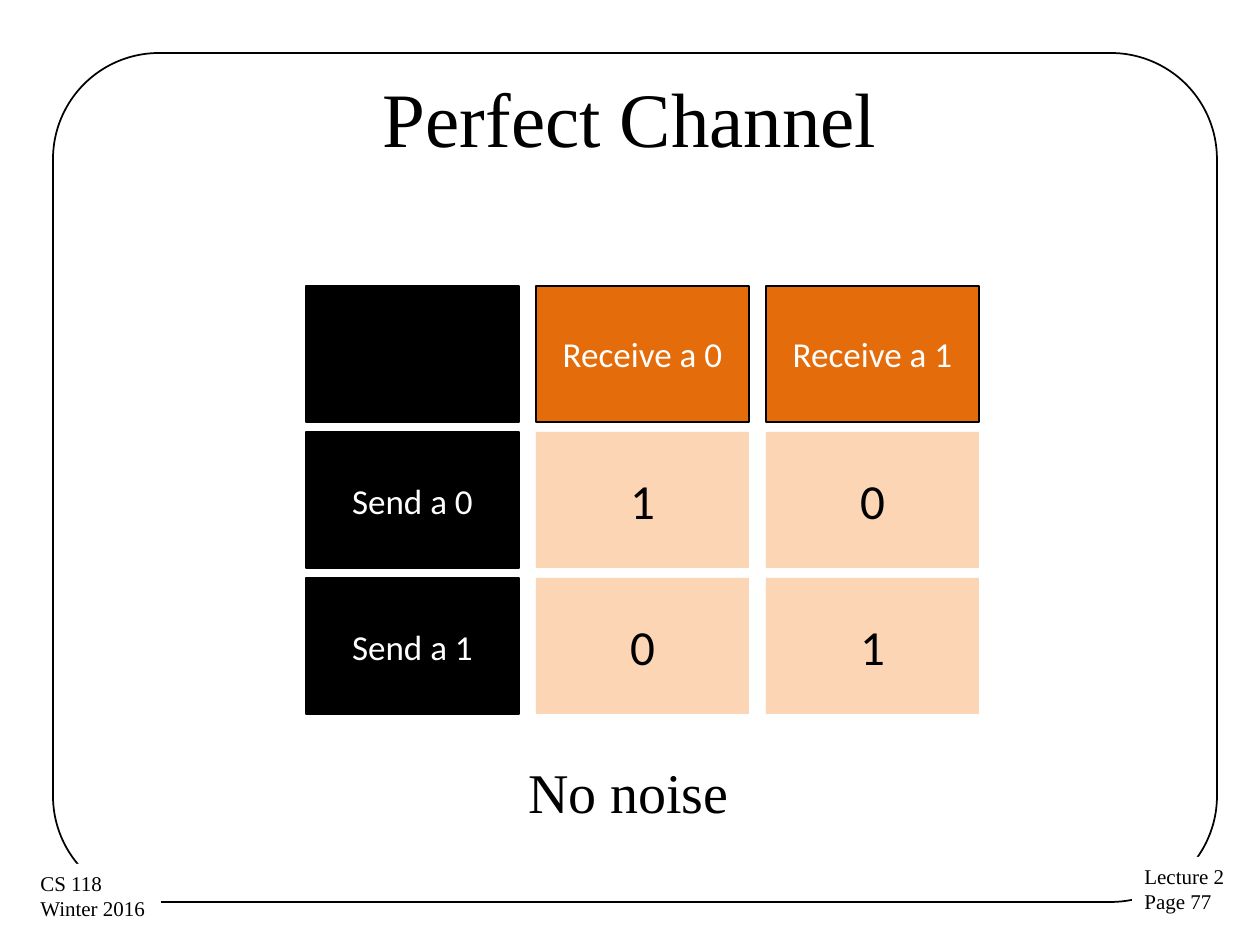
from pptx import Presentation
from pptx.dml.color import RGBColor
from pptx.enum.shapes import MSO_SHAPE
from pptx.enum.text import MSO_ANCHOR, MSO_AUTO_SIZE, PP_ALIGN
from pptx.util import Emu, Pt

BLACK = RGBColor(0x00, 0x00, 0x00)
WHITE = RGBColor(0xFF, 0xFF, 0xFF)
ORANGE = RGBColor(0xE4, 0x6C, 0x0A)
PEACH = RGBColor(0xFC, 0xD5, 0xB5)

SERIF = "Times New Roman"
SANS = "Calibri"
PX_PER_INCH = 126


def px(n):
    return Emu(round(n * 914400 / PX_PER_INCH))


class SlideBuilder:
    def __init__(self, prs):
        self.s = prs.slides.add_slide(prs.slide_layouts[6])

    def set_text(self, sp, text, size, font, color, align):
        tf = sp.text_frame
        tf.text = text
        for p in tf.paragraphs:
            p.alignment = align
            for r in p.runs:
                r.font.size = Pt(size)
                r.font.name = font
                r.font.color.rgb = color
        return tf

    def shape(self, kind, x, y, w, h, fill=None, line=None):
        sp = self.s.shapes.add_shape(kind, px(x), px(y), px(w), px(h))
        sp.shadow.inherit = False
        if fill is None:
            sp.fill.background()
        else:
            sp.fill.solid()
            sp.fill.fore_color.rgb = fill
        if line is None:
            sp.line.fill.background()
        else:
            sp.line.color.rgb = BLACK
            sp.line.width = Pt(line)
        return sp

    def frame(self, x, y, w, h):
        sp = self.shape(MSO_SHAPE.ROUNDED_RECTANGLE, x, y, w, h, line=1)
        sp.adjustments[0] = 0.125

    def cell(self, x, y, w, h, text, fill, color, size, line):
        sp = self.shape(MSO_SHAPE.RECTANGLE, x, y, w, h, fill, line)
        if text:
            tf = self.set_text(sp, text, size, SANS, color, PP_ALIGN.CENTER)
            tf.vertical_anchor = MSO_ANCHOR.MIDDLE

    def footer(self, x, y, w, h, text):
        sp = self.shape(MSO_SHAPE.RECTANGLE, x, y, w, h, WHITE)
        tf = self.set_text(sp, text, 12, SERIF, BLACK, PP_ALIGN.LEFT)
        tf.vertical_anchor = MSO_ANCHOR.TOP
        tf.word_wrap = False
        tf.auto_size = MSO_AUTO_SIZE.SHAPE_TO_FIT_TEXT

    def label(self, x, y, w, h, text, size, anchor=MSO_ANCHOR.TOP):
        sp = self.s.shapes.add_textbox(px(x), px(y), px(w), px(h))
        tf = self.set_text(sp, text, size, SERIF, BLACK, PP_ALIGN.CENTER)
        tf.word_wrap = True
        tf.vertical_anchor = anchor


def main():
    prs = Presentation()
    prs.slide_width, prs.slide_height = px(1260), px(945)
    b = SlideBuilder(prs)

    # Frame and footers
    b.frame(53, 53, 1164, 849)
    b.footer(1132, 857, 106, 64, "Lecture 2\nPage 77")
    b.footer(28, 864, 133, 64, "CS 118\nWinter 2016")

    # Title
    b.label(63, 38, 1134, 158, "Perfect Channel", 44, MSO_ANCHOR.MIDDLE)

    # Channel matrix: sent bit by row, received bit by column
    matrix = [
        ["", "Receive a 0", "Receive a 1"],
        ["Send a 0", "1", "0"],
        ["Send a 1", "0", "1"],
    ]
    left, top, col_pitch, row_pitch = 306, 286, 230, 146
    for i, row in enumerate(matrix):
        for j, text in enumerate(row):
            if j == 0:
                style = (BLACK, WHITE, 20, 0.75)
            elif i == 0:
                style = (ORANGE, WHITE, 20, 0.75)
            else:
                style = (PEACH, BLACK, 28, None)
            b.cell(left + j * col_pitch, top + i * row_pitch, 213, 136,
                   text, *style)

    # Caption
    b.label(514, 751, 229, 81, "No noise", 32)

    prs.save("out.pptx")


if __name__ == "__main__":
    main()
